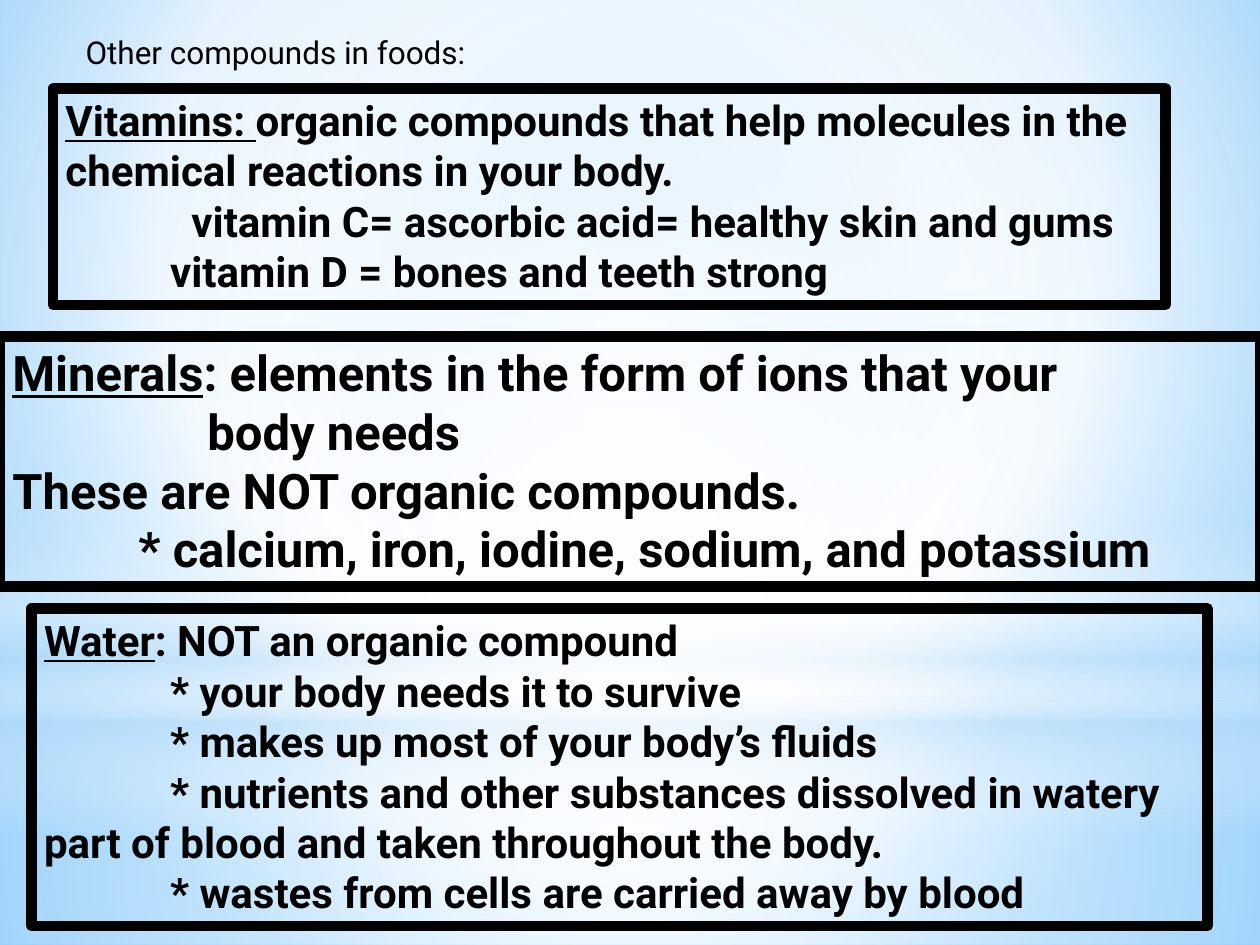
"""Build a slide on vitamins, minerals and water in foods."""
import dataclasses

import pptx
import pptx.dml.color
import pptx.enum.shapes
import pptx.enum.text
import pptx.oxml
import pptx.oxml.ns
import pptx.util

Cm = pptx.util.Cm
Shapes = pptx.enum.shapes.MSO_SHAPE
TAB = 2.54
CENTRE = (50, 50, 50, 50)


@dataclasses.dataclass(frozen=True)
class Theme:
    font: str = "Roboto"
    ink: str = "000000"
    white: str = "FFFFFF"
    haze: str = "B4DCFA"
    sky: str = "9ED5FF"
    deep_sky: str = "5BB9FF"
    title_size: int = 18
    body_size: int = 24
    large_size: int = 28
    border: int = 6


class SlideBuilder:
    def __init__(self, slide, theme):
        self.slide = slide
        self.theme = theme

    def gradient(self, fill, owner, stops, focus=None):
        fill.gradient()
        gradient = owner.find(".//" + pptx.oxml.ns.qn("a:gradFill"))
        for child in list(gradient):
            gradient.remove(child)
        stop_xml = "".join(
            f'<a:gs pos="{position * 1000}"><a:srgbClr val="{color}">'
            f'<a:alpha val="{opacity * 1000}"/></a:srgbClr></a:gs>'
            for position, color, opacity in stops
        )
        if focus:
            left, top, right, bottom = (side * 1000 for side in focus)
            direction = (
                f'<a:path path="circle"><a:fillToRect l="{left}" t="{top}" '
                f'r="{right}" b="{bottom}"/></a:path>'
            )
        else:
            direction = '<a:lin ang="5400000" scaled="0"/>'
        namespace = pptx.oxml.ns.nsdecls("a")
        content = pptx.oxml.parse_xml(
            f"<a:gradFill {namespace}><a:gsLst>{stop_xml}</a:gsLst>{direction}</a:gradFill>"
        )
        gradient.extend(list(content))

    def background(self, stops, focus):
        self.gradient(self.slide.background.fill, self.slide._element, stops, focus)

    def glow(self, kind, top, height, stops, focus=None):
        shape = self.slide.shapes.add_shape(kind, 0, Cm(top), Cm(25.4), Cm(height))
        shape.shadow.inherit = False
        shape.line.fill.background()
        self.gradient(shape.fill, shape._element, stops, focus)

    def style(self, paragraph, size, bold):
        paragraph.alignment = pptx.enum.text.PP_ALIGN.LEFT
        font = paragraph.font
        font.name = self.theme.font
        font.size = pptx.util.Pt(size)
        font.bold = bold
        font.color.rgb = pptx.dml.color.RGBColor.from_string(self.theme.ink)

    def title(self, text, left, top, width, height):
        title = self.slide.shapes.title
        title.left, title.top = Cm(left), Cm(top)
        title.width, title.height = Cm(width), Cm(height)
        title.text_frame.text = text
        title.text_frame.auto_size = pptx.enum.text.MSO_AUTO_SIZE.NONE
        title.text_frame.vertical_anchor = pptx.enum.text.MSO_ANCHOR.TOP
        self.style(title.text_frame.paragraphs[0], self.theme.title_size, False)
        self.slide.shapes._spTree.append(title._element)

    def definition(self, box, size, term, meaning, lines):
        left, top, width, height = (Cm(length) for length in box)
        shape = self.slide.shapes.add_shape(Shapes.RECTANGLE, left, top, width, height)
        shape.shadow.inherit = False
        shape.fill.background()
        shape.line.color.rgb = pptx.dml.color.RGBColor.from_string(self.theme.ink)
        shape.line.width = pptx.util.Pt(self.theme.border)
        frame = shape.text_frame
        frame.word_wrap = True
        frame.vertical_anchor = pptx.enum.text.MSO_ANCHOR.TOP
        heading = frame.paragraphs[0]
        self.style(heading, size, True)
        run = heading.add_run()
        run.text = term
        run.font.underline = True
        heading.add_run().text = meaning
        for indent, text in lines:
            paragraph = frame.add_paragraph()
            paragraph.text = text
            self.style(paragraph, size, True)
            paragraph._p.get_or_add_pPr().set("indent", str(Cm(indent)))


def main():
    presentation = pptx.Presentation()
    presentation.slide_width, presentation.slide_height = Cm(25.4), Cm(19.05)
    slide = presentation.slides.add_slide(presentation.slide_layouts[5])
    theme = Theme()
    builder = SlideBuilder(slide, theme)
    white, haze = theme.white, theme.haze

    builder.background(
        [(0, theme.sky, 100), (60, white, 100), (100, theme.deep_sky, 100)],
        (20, 10, 20, 60),
    )
    builder.glow(Shapes.RECTANGLE, 14.17, 4.88,
                 [(0, white, 91), (37, white, 76), (100, haze, 79)], CENTRE)
    builder.glow(Shapes.RECTANGLE, 0, 14.17,
                 [(0, white, 89), (48, white, 62), (100, haze, 79)], CENTRE)
    builder.glow(Shapes.RECTANGLE, 10.46, 6.35,
                 [(0, white, 0), (29, white, 30), (45, haze, 40),
                  (55, white, 26), (65, haze, 60), (100, white, 0)])
    builder.glow(Shapes.OVAL, 4.45, 14.17, [(0, white, 100), (56, white, 0)], CENTRE)

    builder.title("Other compounds in foods:", 1.47, 0.53, 8.26, 1.02)
    builder.definition(
        (1.07, 1.78, 22.43, 4.37), theme.body_size, "Vitamins: ",
        "organic compounds that help molecules in the chemical reactions in your body.",
        [(TAB, "vitamin C= ascorbic acid= healthy skin and gums"),
         (2.11, "vitamin D = bones and teeth strong")],
    )
    builder.definition(
        (0, 6.78, 25.4, 5.05), theme.large_size, "Minerals",
        ": elements in the form of ions that your",
        [(3.93, "body needs"),
         (0, "These are NOT organic compounds."),
         (TAB, "* calcium, iron, iodine, sodium, and potassium")],
    )
    water_facts = [
        "your body needs it to survive",
        "makes up most of your body’s fluids",
        "nutrients and other substances dissolved in watery part of blood "
        "and taken throughout the body.",
        "wastes from cells are carried away by blood",
    ]
    builder.definition(
        (0.64, 12.27, 23.7, 6.4), theme.body_size, "Water",
        ": NOT an organic compound",
        [(TAB, f"* {fact}") for fact in water_facts],
    )
    presentation.save("out.pptx")


if __name__ == "__main__":
    main()
